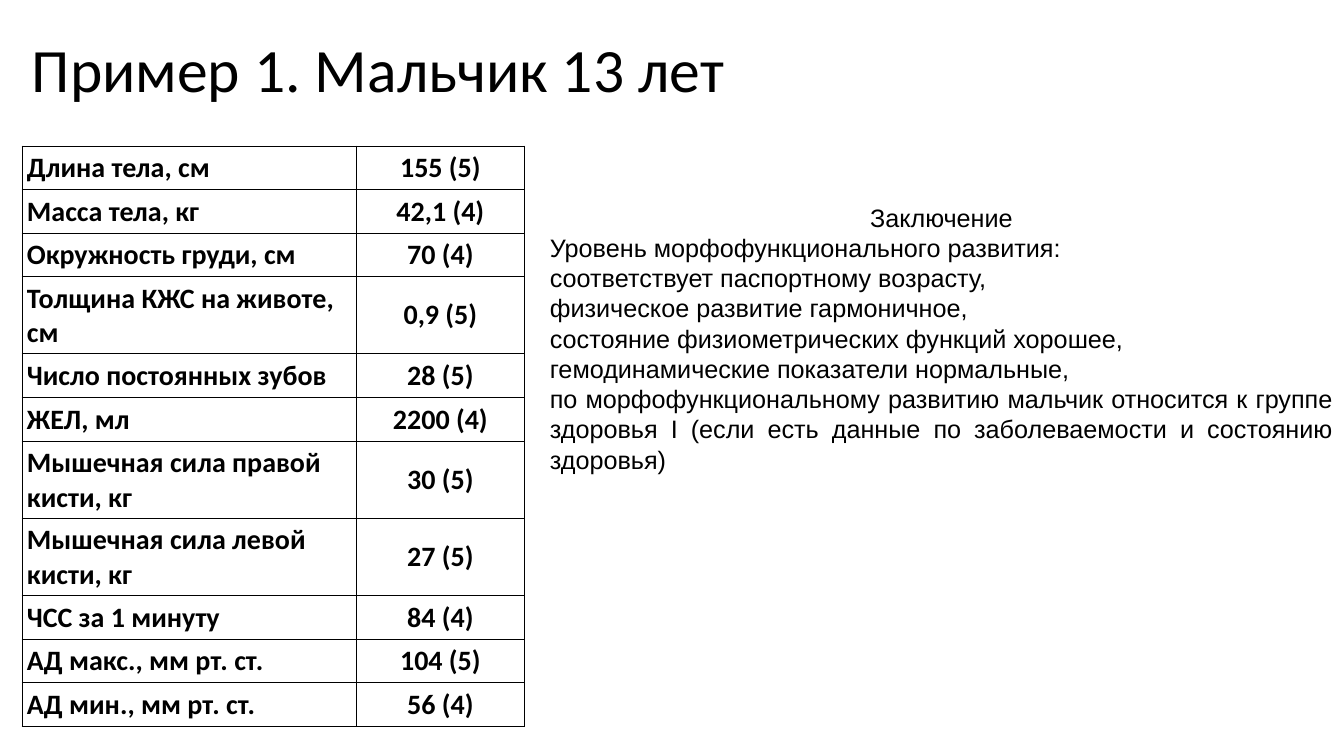
from dataclasses import dataclass

import lxml.etree
import pptx
import pptx.dml.color
import pptx.enum.text
import pptx.oxml.ns
import pptx.util

ALIGN = pptx.enum.text.PP_ALIGN
ANCHOR = pptx.enum.text.MSO_ANCHOR
BLACK = pptx.dml.color.RGBColor(0, 0, 0)
SCALE = 914400 / 100.8  # EMU in one px
ROW, TALL = 38, 66


def px(count: int) -> int:
    return round(count * SCALE)


@dataclass
class Box:
    left: int
    top: int
    width: int
    height: int

    def emu(self) -> tuple[int, ...]:
        return tuple(map(px, (self.left, self.top, self.width, self.height)))


@dataclass
class Test:
    label: str
    value: str
    height: int = ROW


@dataclass
class Line:
    text: str
    align: ALIGN = ALIGN.JUSTIFY


TESTS = [
    Test("Длина тела, см", "155 (5)"),
    Test("Масса тела, кг", "42,1 (4)"),
    Test("Окружность груди, см", "70 (4)"),
    Test("Толщина КЖС на животе, см", "0,9 (5)", TALL),
    Test("Число постоянных зубов", "28 (5)"),
    Test("ЖЕЛ, мл", "2200 (4)"),
    Test("Мышечная сила правой кисти, кг", "30 (5)", TALL),
    Test("Мышечная сила левой кисти, кг", "27 (5)", TALL),
    Test("ЧСС за 1 минуту", "84 (4)"),
    Test("АД макс., мм рт. ст.", "104 (5)"),
    Test("АД мин., мм рт. ст.", "56 (4)"),
]

RESULT = [
    Line("Заключение", ALIGN.CENTER),
    Line("Уровень морфофункционального развития:"),
    Line("соответствует паспортному возрасту,"),
    Line("физическое развитие гармоничное,"),
    Line("состояние физиометрических функций хорошее,"),
    Line("гемодинамические показатели нормальные,"),
    Line("по морфофункциональному развитию мальчик относится к группе "
         "здоровья I (если есть данные по заболеваемости и состоянию здоровья)"),
]


def write(para, line: Line, font: str, size: int, bold: bool = False) -> None:
    para.text = line.text
    para.alignment = line.align
    for run in para.runs:
        run.font.name = font
        run.font.size = pptx.util.Pt(size)
        run.font.bold = bold
        run.font.color.rgb = BLACK


def add_text(slide, box: Box, lines: list[Line], font: str, size: int):
    frame = slide.shapes.add_textbox(*box.emu()).text_frame
    frame.word_wrap = True
    for index, line in enumerate(lines):
        para = frame.add_paragraph() if index else frame.paragraphs[0]
        write(para, line, font, size)
    return frame


def add_edges(cell) -> None:
    props = cell._tc.get_or_add_tcPr()
    qn = pptx.oxml.ns.qn
    for index, side in enumerate(("lnL", "lnR", "lnT", "lnB")):
        edge = lxml.etree.Element(qn(f"a:{side}"), w=str(pptx.util.Pt(0.75)))
        fill = lxml.etree.SubElement(edge, qn("a:solidFill"))
        lxml.etree.SubElement(fill, qn("a:srgbClr"), val=str(BLACK))
        props.insert(index, edge)


def add_cell(cell, line: Line) -> None:
    inset = px(5)
    cell.margin_left = cell.margin_right = inset
    cell.margin_top = cell.margin_bottom = inset
    cell.vertical_anchor = ANCHOR.MIDDLE
    cell.fill.background()
    write(cell.text_frame.paragraphs[0], line, "Calibri", 20, True)
    add_edges(cell)


def add_tests(slide, box: Box, widths: tuple[int, int], tests: list[Test]) -> None:
    frame = slide.shapes.add_table(len(tests), len(widths), *box.emu())
    table = frame.table
    table.first_row = table.horz_banding = False
    for column, width in zip(table.columns, widths):
        column.width = px(width)
    for row, test in zip(table.rows, tests):
        row.height = px(test.height)
        add_cell(row.cells[0], Line(test.label, ALIGN.LEFT))
        add_cell(row.cells[1], Line(test.value, ALIGN.CENTER))
    frame.height = px(box.height)


def main() -> None:
    deck = pptx.Presentation()
    deck.slide_width, deck.slide_height = px(1344), px(756)
    slide = deck.slides.add_slide(deck.slide_layouts[6])

    # Title
    title = [Line("Пример 1. Мальчик 13 лет", ALIGN.LEFT)]
    head = add_text(slide, Box(22, 0, 1159, 146), title, "Calibri", 44)
    head.vertical_anchor = ANCHOR.MIDDLE
    head.paragraphs[0].line_spacing = 0.9

    # Measurements
    add_tests(slide, Box(22, 146, 503, 576), (334, 169), TESTS)

    # Conclusion
    note = add_text(slide, Box(540, 197, 803, 285), RESULT, "Arial", 18)
    note.auto_size = pptx.enum.text.MSO_AUTO_SIZE.SHAPE_TO_FIT_TEXT

    deck.save("out.pptx")


if __name__ == "__main__":
    main()
